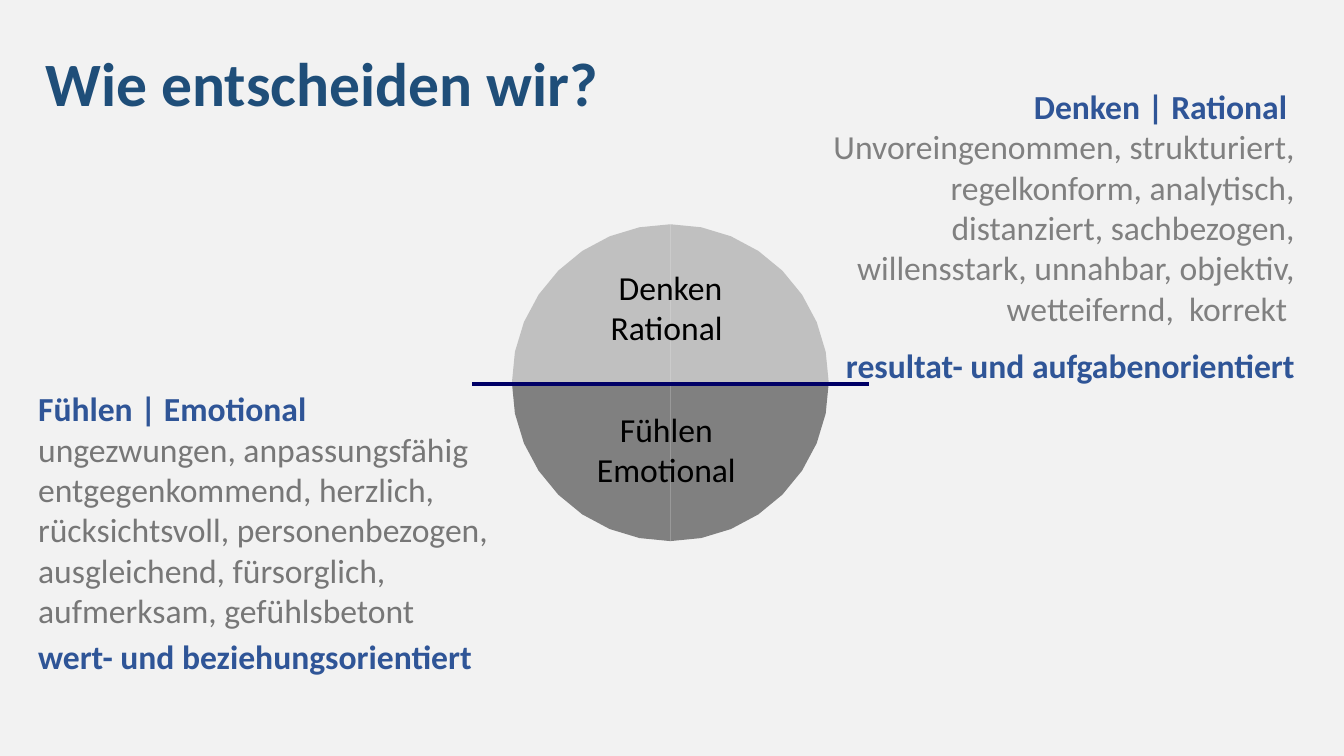
from dataclasses import dataclass
from math import cos, pi, sin

from lxml.etree import SubElement as Sub
from pptx import Presentation
from pptx.dml.color import RGBColor as Rgb
from pptx.enum.shapes import MSO_CONNECTOR as Link
from pptx.enum.text import MSO_ANCHOR as Anchor, MSO_AUTO_SIZE as Fit, PP_ALIGN as Align
from pptx.oxml.ns import qn
from pptx.util import Emu, Inches, Pt

COLS, ROWS = 80, 45
WIDE, HIGH = Inches(13.33), Inches(7.5)


@dataclass(frozen=True)
class Theme:
    font: str = "Calibri"
    big: int = 44
    text: int = 24
    rule: int = 3
    back: str = "F2F2F2"
    title: str = "1F4E79"
    head: str = "2F5597"
    think: str = "808080"
    feel: str = "777777"
    ink: str = "000000"
    light: str = "C0C0C0"
    dark: str = "808080"
    line: str = "000066"


LOOK = Theme()


def col(n):
    return Emu(round(WIDE * n / COLS))


def row(n):
    return Emu(round(HIGH * n / ROWS))


def area(x, y, w, h):
    return col(x), row(y), col(w), row(h)


def style(para, size, hue, bold=False, side=Align.LEFT):
    para.alignment = side
    font = para.font
    font.name, font.size, font.bold = LOOK.font, Pt(size), bold
    font.color.rgb = Rgb.from_string(hue)


def title(slide, text, place):
    shape = slide.shapes.title
    shape.left, shape.top, shape.width, shape.height = area(*place)
    frame = shape.text_frame
    frame.text = text
    frame.auto_size = Fit.NONE
    frame.vertical_anchor = Anchor.TOP
    frame.margin_top = row(0.97)
    para = frame.paragraphs[0]
    para.line_spacing = 0.9
    style(para, LOOK.big, LOOK.title, True)


def block(slide, place, lines, side=Align.LEFT, wrap=True):
    frame = slide.shapes.add_textbox(*area(*place)).text_frame
    frame.word_wrap = wrap
    frame.auto_size = Fit.SHAPE_TO_FIT_TEXT
    for i, (text, hue, bold) in enumerate(lines):
        para = frame.add_paragraph() if i else frame.paragraphs[0]
        para.text = text
        style(para, LOOK.text, hue, bold, side)
    return frame


def label(slide, place, *texts):
    frame = block(slide, place, [(t, LOOK.ink, False) for t in texts], Align.CENTER)
    frame.margin_left = frame.margin_right = Inches(0.2)
    frame.margin_top = frame.margin_bottom = 0


def half(slide, mid, size, start, hue, steps=8):
    group = slide.shapes.add_group_shape()
    x, y = col(mid[0]), row(mid[1])
    for turn in range(2):
        turns = [start + (turn + i / steps) * pi / 2 for i in range(steps + 1)]
        arc = [(x + col(size) * cos(a), y + row(size) * sin(a)) for a in turns]
        pen = group.shapes.build_freeform(x, y)
        pen.add_line_segments(arc, close=True)
        part = pen.convert_to_shape()
        part.shadow.inherit = False
        part.fill.solid()
        part.fill.fore_color.rgb = Rgb.from_string(hue)
        part.line.fill.background()


def rule(slide, left, right, y):
    line = slide.shapes.add_connector(Link.STRAIGHT, col(left), row(y), col(right), row(y))
    line.line.color.rgb = Rgb.from_string(LOOK.line)
    line.line.width = Pt(LOOK.rule)
    Sub(line._element.spPr, qn("a:effectLst"))


def main():
    deck = Presentation()
    deck.slide_width, deck.slide_height = WIDE, HIGH
    slide = deck.slides.add_slide(deck.slide_layouts[5])
    slide.background.fill.solid()
    slide.background.fill.fore_color.rgb = Rgb.from_string(LOOK.back)

    title(slide, "Wie entscheiden wir?", (2.1, 2.22, 49.14, 10.32))

    mid, size = (39.9, 22.78), 9.43
    half(slide, mid, size, 0, LOOK.dark)
    half(slide, mid, size, pi, LOOK.light)
    rule(slide, 28.1, 51.7, 22.86)
    label(slide, (34.04, 24.33, 11.7, 4.86), "Fühlen ", "Emotional ")
    label(slide, (34.78, 15.88, 10.26, 4.86), "Denken Rational ")

    block(slide, (48.02, 4.82, 29.64, 15.12), [
        ("Denken | Rational ", LOOK.head, True),
        ("Unvoreingenommen, strukturiert, regelkonform, analytisch, "
         "distanziert, sachbezogen, willensstark, unnahbar, objektiv, "
         "wetteifernd,  korrekt ", LOOK.think, False),
    ], Align.RIGHT)
    block(slide, (1.68, 22.82, 29.94, 15.12), [
        ("Fühlen | Emotional", LOOK.head, True),
        ("ungezwungen, anpassungsfähig entgegenkommend, herzlich,", LOOK.feel, False),
        ("rücksichtsvoll, personenbezogen, ausgleichend, fürsorglich, "
         "aufmerksam, gefühlsbetont", LOOK.feel, False),
    ])
    block(slide, (49.44, 20.22, 28.68, 3),
          [("resultat- und aufgabenorientiert ", LOOK.head, True)], Align.RIGHT, False)
    block(slide, (1.68, 37.56, 27.3, 3),
          [("wert- und beziehungsorientiert", LOOK.head, True)], wrap=False)

    deck.save("out.pptx")


if __name__ == "__main__":
    main()
